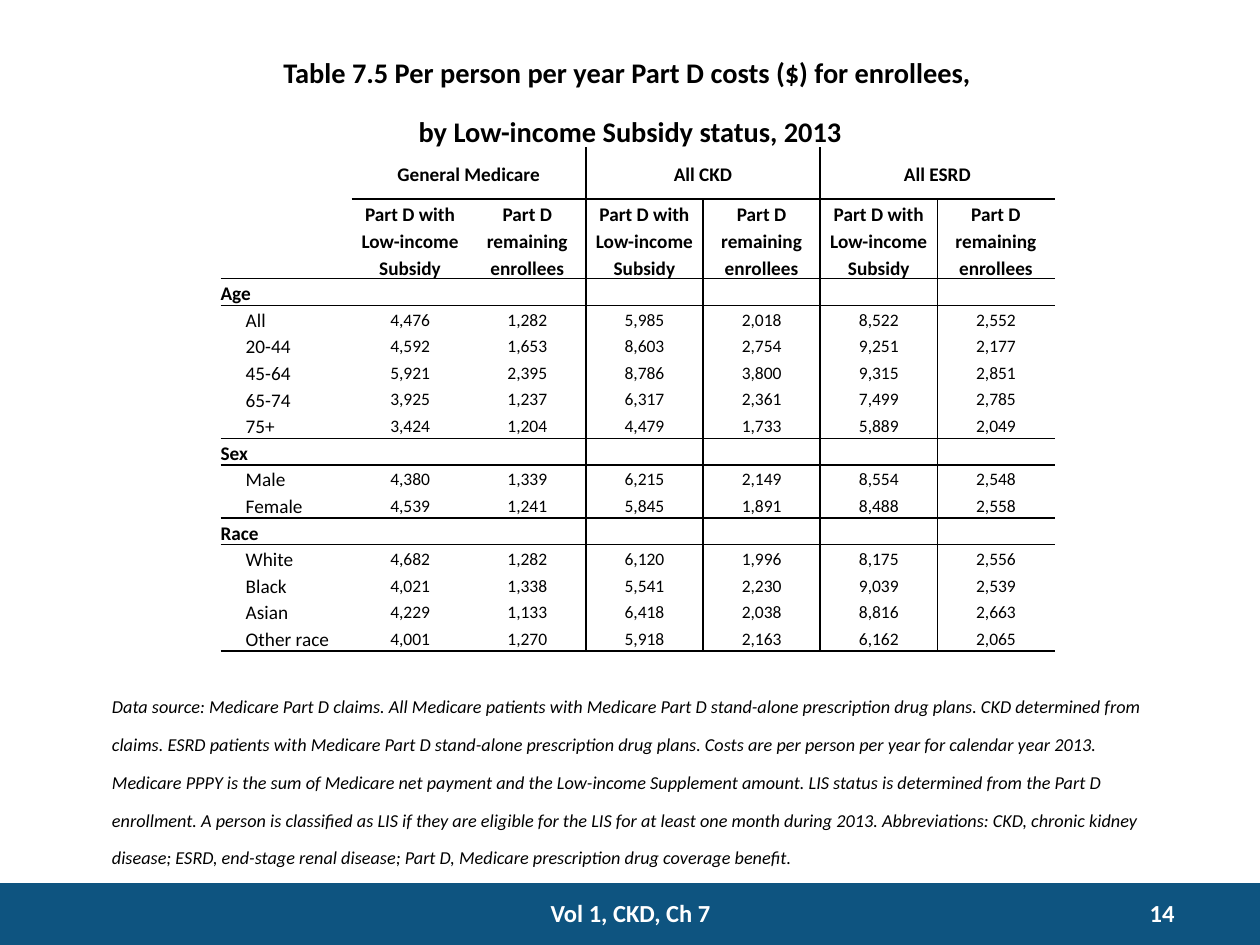
from lxml import etree
from pptx import Presentation
from pptx.dml.color import RGBColor
from pptx.enum import shapes, text
from pptx.oxml.ns import qn
from pptx.util import Inches, Pt

BLACK = RGBColor(0x00, 0x00, 0x00)
WHITE = RGBColor(0xFF, 0xFF, 0xFF)
BLUE = RGBColor(0x0E, 0x54, 0x80)
LEFT, CENTER, RIGHT = text.PP_ALIGN.LEFT, text.PP_ALIGN.CENTER, text.PP_ALIGN.RIGHT


def style(p, size, color, align, bold=False, italic=False, raised=False):
    p.alignment = align
    for r in p.runs:
        r.font.name = "Calibri"
        r.font.size = Pt(size)
        r.font.bold = bold
        r.font.italic = italic
        r.font.color.rgb = color
        if raised:
            r.font._element.set("baseline", "30000")


def add_border(tc_pr, side):
    ln = etree.SubElement(tc_pr, qn("a:ln" + side), w=str(Pt(1)))
    fill = etree.SubElement(ln, qn("a:solidFill"))
    etree.SubElement(fill, qn("a:srgbClr"), val=str(BLACK))


prs = Presentation()
prs.slide_width, prs.slide_height = Inches(10), Inches(7.5)
s = prs.slides.add_slide(prs.slide_layouts[6])

bar = s.shapes.add_shape(shapes.MSO_SHAPE.RECTANGLE, 0, Inches(7.01), Inches(10), Inches(0.5))
bar.shadow.inherit = False
bar.fill.solid()
bar.fill.fore_color.rgb = BLUE
bar.line.fill.background()

source = (
    "Data source: Medicare Part D claims. All Medicare patients with Medicare Part D "
    "stand-alone prescription drug plans. CKD determined from claims. ESRD patients with "
    "Medicare Part D stand-alone prescription drug plans. Costs are per person per year for "
    "calendar year 2013. Medicare PPPY is the sum of Medicare net payment and the Low-income "
    "Supplement amount. LIS status is determined from the Part D enrollment. A person is "
    "classified as LIS if they are eligible for the LIS for at least one month during 2013. "
    "Abbreviations: CKD, chronic kidney disease; ESRD, end-stage renal disease; Part D, "
    "Medicare prescription drug coverage benefit."
)
title = (
    "Table 7.5 Per person per year Part D costs ($) for enrollees, \n"
    "by Low-income Subsidy status, 2013"
)
boxes = [
    (0.79, 5.44, 8.42, 1.31, source, 18, BLACK, LEFT, False, True, True),
    (0.54, 0.34, 8.92, 0.73, title, 28, BLACK, CENTER, True, False, True),
    (3.92, 7.08, 2.17, 0.33, "Vol 1, CKD, Ch 7", 14, WHITE, CENTER, True, False, False),
    (8.42, 7.08, 1, 0.3, "14", 14, WHITE, RIGHT, True, False, False),
]
for x, y, w, h, words, *look in boxes:
    tf = s.shapes.add_textbox(Inches(x), Inches(y), Inches(w), Inches(h)).text_frame
    tf.word_wrap = True
    if look[-1]:
        tf.auto_size = text.MSO_AUTO_SIZE.SHAPE_TO_FIT_TEXT
    tf.text = words
    for p in tf.paragraphs:
        style(p, *look)

rows = [
    ["", "General Medicare", "", "All CKD", "", "All ESRD", ""],
    [""] + ["Part D with Low-income Subsidy", "Part D remaining enrollees"] * 3,
    ["Age"] + [""] * 6,
    ["All", "4,476", "1,282", "5,985", "2,018", "8,522", "2,552"],
    ["20-44", "4,592", "1,653", "8,603", "2,754", "9,251", "2,177"],
    ["45-64", "5,921", "2,395", "8,786", "3,800", "9,315", "2,851"],
    ["65-74", "3,925", "1,237", "6,317", "2,361", "7,499", "2,785"],
    ["75+", "3,424", "1,204", "4,479", "1,733", "5,889", "2,049"],
    ["Sex"] + [""] * 6,
    ["Male", "4,380", "1,339", "6,215", "2,149", "8,554", "2,548"],
    ["Female", "4,539", "1,241", "5,845", "1,891", "8,488", "2,558"],
    ["Race"] + [""] * 6,
    ["White", "4,682", "1,282", "6,120", "1,996", "8,175", "2,556"],
    ["Black", "4,021", "1,338", "5,541", "2,230", "9,039", "2,539"],
    ["Asian", "4,229", "1,133", "6,418", "2,038", "8,816", "2,663"],
    ["Other race", "4,001", "1,270", "5,918", "2,163", "6,162", "2,065"],
]
section_ends = (0, 1, 7, 10, 15)

frame = s.shapes.add_table(len(rows), 7, Inches(1.75), Inches(1.17), Inches(6.59), Inches(4))
table = frame.table
table.first_row = table.horz_banding = False
table._tbl.tblPr.find(qn("a:tableStyleId")).text = "{2D5ABB26-0587-4C30-8999-92F81FD0307C}"
for j, column in enumerate(table.columns):
    column.width = Inches(0.93 if j else 1.04)
for i, row in enumerate(table.rows):
    row.height = Inches({0: 0.41, 1: 0.63}.get(i, 0.21))
for j in (1, 3, 5):
    table.cell(0, j).merge(table.cell(0, j + 1))

for i, values in enumerate(rows):
    for j, value in enumerate(values):
        cell = table.cell(i, j)
        cell.vertical_anchor = text.MSO_ANCHOR.MIDDLE
        cell.margin_top = cell.margin_bottom = 0
        cell.margin_left = Inches(0.07 if j else 0)
        cell.margin_right = Inches(0.07 if j else 0.08)
        p = cell.text_frame.paragraphs[0]
        p.line_spacing = 1.15
        if value:
            p.text = value
            heading = i < 2 or not values[1]
            size = 11 if heading or j == 0 else 10
            style(p, size, BLACK, CENTER if j else LEFT, bold=heading)
            if j == 0 and not heading:
                p._p.get_or_add_pPr().set("marL", str(Inches(0.2)))
        else:
            etree.SubElement(p._p, qn("a:endParaRPr"), sz="1000")

        tc_pr = cell._tc.get_or_add_tcPr()
        edges = {
            "L": j in (3, 5),
            "R": j in (2, 4) or (i == 0 and j in (1, 3)),
            "T": i - 1 in section_ends and (i > 1 or j > 0),
            "B": i in section_ends and (i > 0 or j > 0),
        }
        for side, drawn in edges.items():
            if drawn:
                add_border(tc_pr, side)
        cell.fill.background()

prs.save("out.pptx")
